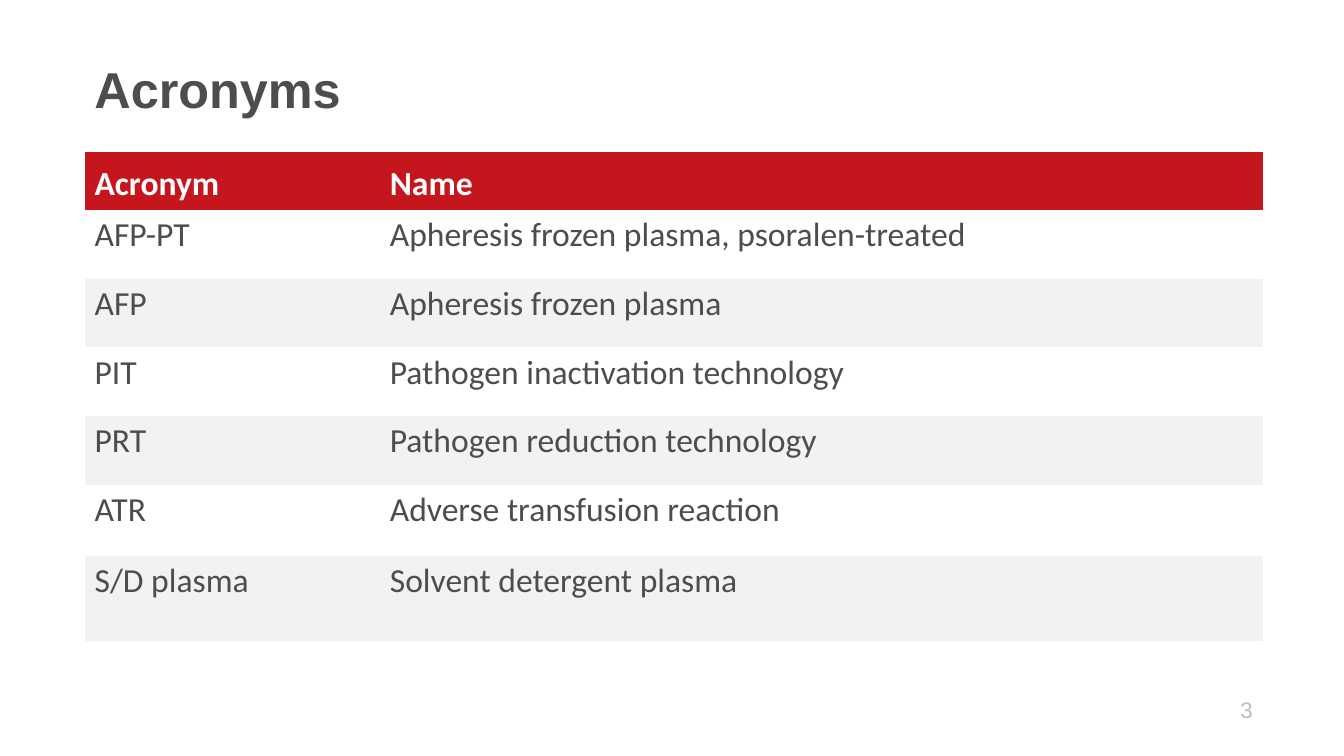
from pptx import Presentation
from pptx.dml.color import RGBColor
from pptx.enum.text import MSO_ANCHOR as Anchor, PP_ALIGN as Align
from pptx.util import Cm, Pt

RED = RGBColor(0xC4, 0x16, 0x1C)
BAND = RGBColor(0xF2, 0xF2, 0xF2)
DARK = RGBColor(0x4D, 0x4D, 0x4D)
PALE = RGBColor(0xBE, 0xBE, 0xBE)
WHITE = RGBColor(0xFF, 0xFF, 0xFF)

NO_GRID_STYLE = "{2D5ABB26-0587-4C30-8999-92F81FD0307C}"
COL_WIDTHS = [Cm(7.44), Cm(22.25)]
ROW_HEIGHTS = [Cm(1.45)] + [Cm(1.73)] * 4 + [Cm(1.8), Cm(2.13)]
ACRONYMS = [
    ("Acronym", "Name"),
    ("AFP-PT", "Apheresis frozen plasma, psoralen-treated"),
    ("AFP", "Apheresis frozen plasma"),
    ("PIT", "Pathogen inactivation technology"),
    ("PRT", "Pathogen reduction technology"),
    ("ATR", "Adverse transfusion reaction"),
    ("S/D plasma", "Solvent detergent plasma"),
]


def write(tf, text, size, color, font="Arial", bold=False,
          align=Align.LEFT, spacing=None):
    p = tf.paragraphs[0]
    p.alignment = align
    p.line_spacing = spacing
    r = p.add_run()
    r.text = text
    r.font.name = font
    r.font.size = Pt(size)
    r.font.bold = bold
    r.font.color.rgb = color


def add_label(s, box, text, anchor, **fmt):
    tf = s.shapes.add_textbox(*box).text_frame
    tf.word_wrap = True
    tf.vertical_anchor = anchor
    write(tf, text, spacing=0.9, **fmt)


def add_acronym_table(s, left, top):
    frame = s.shapes.add_table(len(ACRONYMS), len(COL_WIDTHS), left, top,
                               sum(COL_WIDTHS), sum(ROW_HEIGHTS))
    table = frame.table
    table._tbl.tblPr.find("{*}tableStyleId").text = NO_GRID_STYLE
    for column, width in zip(table.columns, COL_WIDTHS):
        column.width = width
    for i, (row, height) in enumerate(zip(table.rows, ROW_HEIGHTS)):
        row.height = height
        header = i == 0
        for cell, text in zip(row.cells, ACRONYMS[i]):
            cell.vertical_anchor = Anchor.BOTTOM if header else Anchor.TOP
            if i % 2:
                cell.fill.background()
            else:
                cell.fill.solid()
                cell.fill.fore_color.rgb = RED if header else BAND
            write(cell.text_frame, text, 24, WHITE if header else DARK,
                  font="Calibri", bold=header)


def main():
    prs = Presentation()
    prs.slide_width, prs.slide_height = Cm(33.87), Cm(19.05)
    s = prs.slides.add_slide(prs.slide_layouts[6])
    add_label(s, (Cm(2.41), Cm(16.81), Cm(29.41), Cm(2.24)), "3",
              Anchor.MIDDLE, size=16, color=PALE, align=Align.RIGHT)
    add_label(s, (Cm(2.13), Cm(0.51), Cm(29.41), Cm(2.62)), "Acronyms",
              Anchor.BOTTOM, size=36, color=DARK, bold=True)
    add_acronym_table(s, Cm(2.13), Cm(3.84))
    prs.save("out.pptx")


if __name__ == "__main__":
    main()
